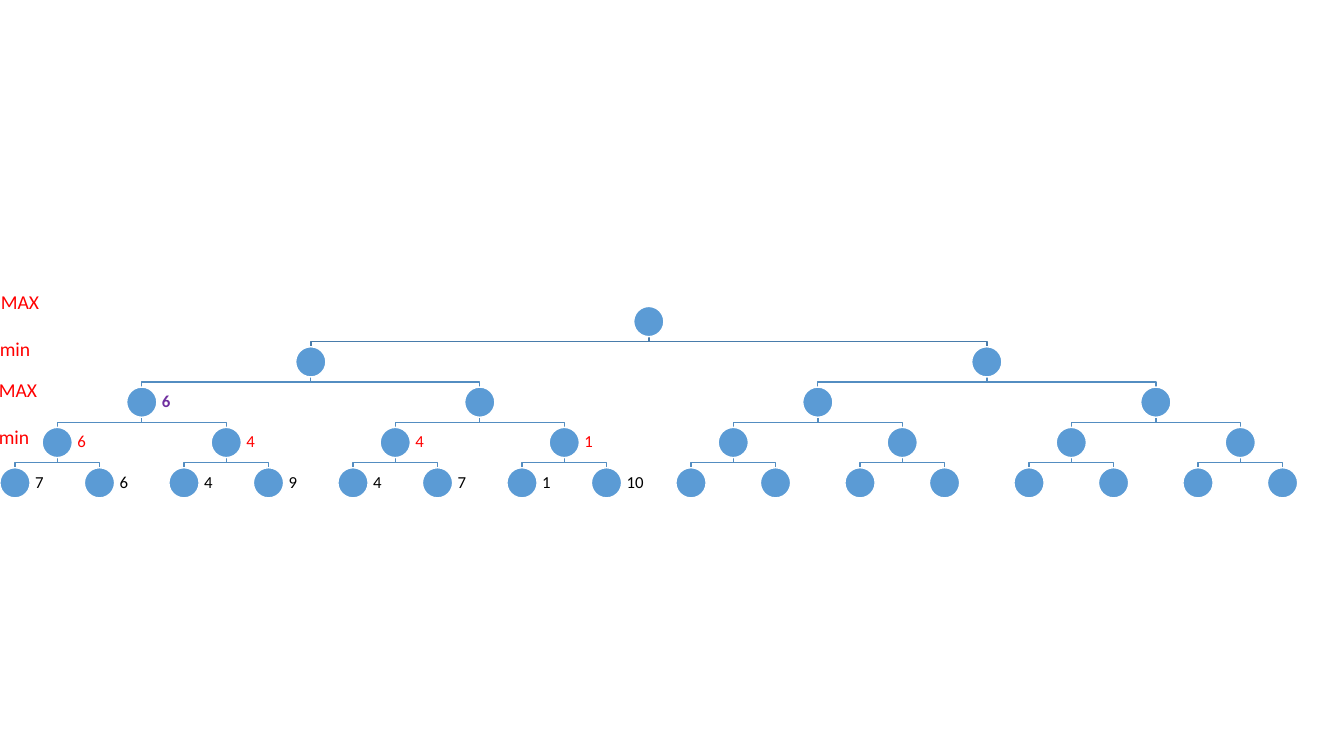
from pptx import Presentation
from pptx.dml.color import RGBColor
from pptx.enum.shapes import MSO_SHAPE as SHAPE
from pptx.enum.text import MSO_ANCHOR as ANCHOR
from pptx.util import Inches, Pt

BLUE = RGBColor(0x5B, 0x9B, 0xD5)
LINK = RGBColor(0x53, 0x8D, 0xC1)
ROOT_LINK = RGBColor(0x49, 0x7C, 0xAB)
WHITE = RGBColor(0xFF, 0xFF, 0xFF)
BLACK = RGBColor(0x00, 0x00, 0x00)
RED = RGBColor(0xFF, 0x00, 0x00)
PURPLE = RGBColor(0x70, 0x30, 0xA0)

DEPTH = 5
NODE = 0.3
ROW = 0.4
VALUES = {
    2: ["6"],
    3: ["6", "4", "4", "1"],
    4: ["7", "6", "4", "9", "4", "7", "1", "10"],
}
VALUE_COLORS = {2: PURPLE, 3: RED, 4: BLACK}
PLAYERS = [("MAX", -0.09, 0), ("min", -0.1, 0.46), ("MAX", -0.11, 0.87), ("min", -0.11, 1.34)]


def add_text(slide, text, x, y, w, h, size=12, color=BLACK, bold=False,
             inset=None, anchor=ANCHOR.TOP, spacing=None):
    """Add a text box holding one formatted line."""
    tf = slide.shapes.add_textbox(Inches(x), Inches(y), Inches(w), Inches(h)).text_frame
    tf.word_wrap = True
    tf.vertical_anchor = anchor
    if inset is not None:
        tf.margin_left = tf.margin_right = Inches(inset)
        tf.margin_top = tf.margin_bottom = Inches(inset)
    p = tf.paragraphs[0]
    p.line_spacing = spacing
    r = p.add_run()
    r.text = text
    r.font.name = "Calibri"
    r.font.size = Pt(size)
    r.font.bold = bold
    r.font.color.rgb = color


def add_link(slide, parent_x, child_x, y, color):
    """Draw the elbow from the bottom of a parent to the top of its child."""
    gap = ROW - NODE
    points = [(parent_x, y + gap / 2), (child_x, y + gap / 2), (child_x, y + gap)]
    fb = slide.shapes.build_freeform(Inches(parent_x), Inches(y))
    fb.add_line_segments([(Inches(px), Inches(py)) for px, py in points], close=False)
    sp = fb.convert_to_shape()
    sp.shadow.inherit = False
    sp.fill.background()
    sp.line.color.rgb = color
    sp.line.width = Pt(1)


def add_node(slide, center_x, y):
    """Draw one round node of the tree."""
    sp = slide.shapes.add_shape(SHAPE.OVAL, Inches(center_x - NODE / 2), Inches(y),
                                Inches(NODE), Inches(NODE))
    sp.shadow.inherit = False
    sp.fill.solid()
    sp.fill.fore_color.rgb = BLUE
    sp.line.color.rgb = WHITE
    sp.line.width = Pt(1)


def add_tree(slide, x, y, w):
    """Draw the binary game tree with its values across the given width."""
    levels = [[x + w * (i + 0.5) / 2 ** d for i in range(2 ** d)] for d in range(DEPTH)]
    for d in range(1, DEPTH):
        for i, center in enumerate(levels[d]):
            add_link(slide, levels[d - 1][i // 2], center, y + (d - 1) * ROW + NODE,
                     ROOT_LINK if d == 1 else LINK)
    for d, centers in enumerate(levels):
        for center in centers:
            add_node(slide, center, y + d * ROW)
        for center, value in zip(centers, VALUES.get(d, [])):
            add_text(slide, value, center + NODE / 2, y + d * ROW, 0.46, NODE,
                     color=VALUE_COLORS[d], bold=d == 2, inset=0.05,
                     anchor=ANCHOR.MIDDLE, spacing=0.9)


def add_players(slide, y):
    """Label the tree levels with the player to move."""
    for name, x, offset in PLAYERS:
        add_text(slide, name, x, y + offset, 0.66, 0.34, size=14, color=RED)


def main():
    """Build and save the slide."""
    prs = Presentation()
    prs.slide_width, prs.slide_height = Inches(13.33), Inches(7.5)
    slide = prs.slides.add_slide(prs.slide_layouts[6])
    add_tree(slide, -0.27, 3.04, 13.41)
    add_players(slide, 2.83)
    prs.save("out.pptx")


if __name__ == "__main__":
    main()
